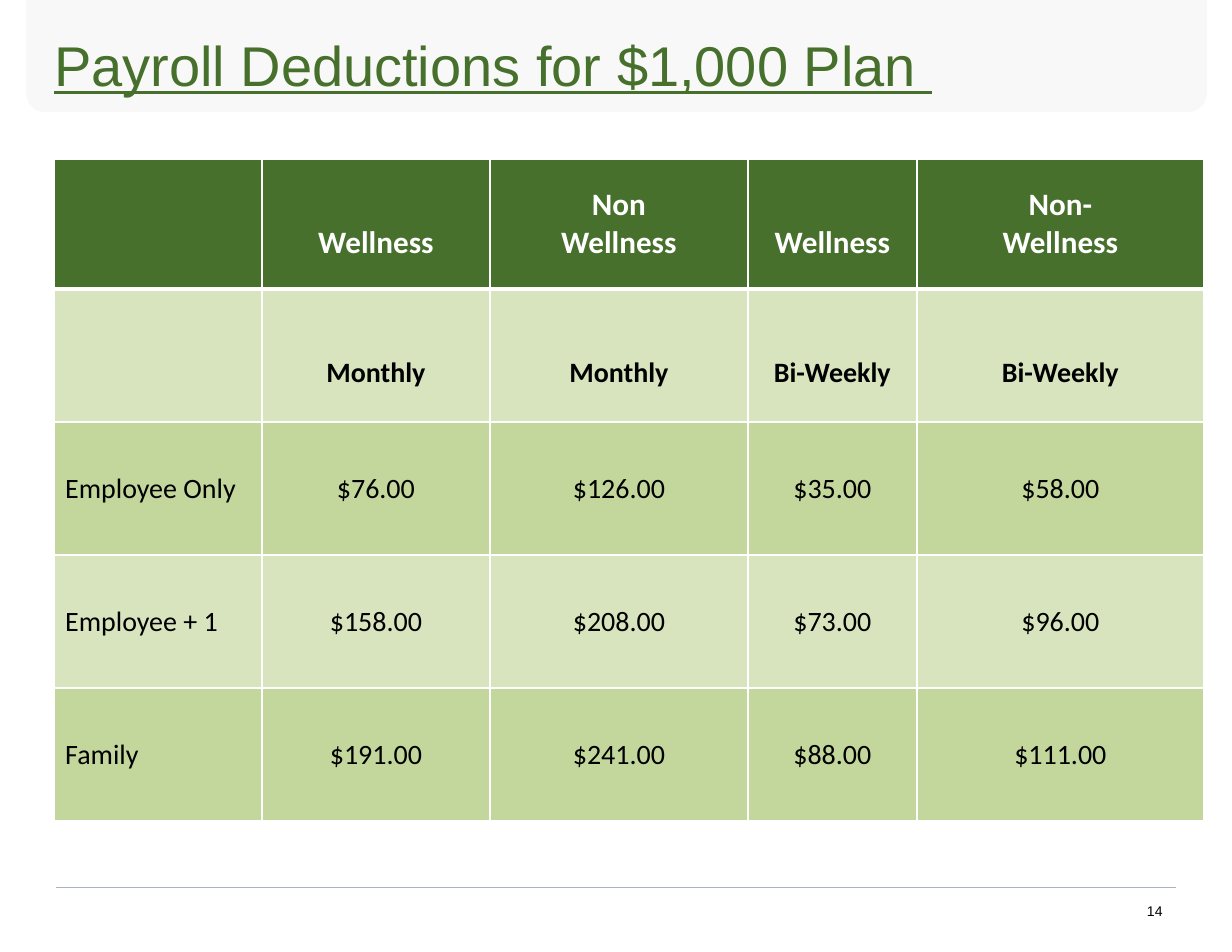
from lxml import etree
from pptx import Presentation
from pptx import util as u
from pptx.dml.color import RGBColor
from pptx.enum import shapes, text
from pptx.oxml import ns

PX = 914400 // 112
GREEN = RGBColor(0x46, 0x70, 0x2B)
PALE = RGBColor(0xD7, 0xE4, 0xBD)
LEAF = RGBColor(0xC3, 0xD6, 0x9B)
WHITE = RGBColor(0xFF, 0xFF, 0xFF)
BLACK = RGBColor(0, 0, 0)
BAND = RGBColor(0xF8, 0xF8, 0xF8)
RULE = RGBColor(0xAA, 0xB4, 0xC1)

COLUMNS = (208, 228, 258, 169, 287)
ROWS = (130, 133, 133, 133, 133)
RATES = (
    ("", "Wellness", "Non\nWellness", "Wellness", "Non-\nWellness"),
    ("", "Monthly", "Monthly", "Bi-Weekly", "Bi-Weekly"),
    ("Employee Only", "$76.00", "$126.00", "$35.00", "$58.00"),
    ("Employee + 1", "$158.00", "$208.00", "$73.00", "$96.00"),
    ("Family", "$191.00", "$241.00", "$88.00", "$111.00"),
)


def px(*lengths):
    return [n * PX for n in lengths]


def style(font, name, size, color, bold=False):
    font.name, font.size, font.bold = name, u.Pt(size), bold
    font.color.rgb = color


def clear_margins(frame):
    frame.margin_left = frame.margin_right = 0
    frame.margin_top = frame.margin_bottom = 0


def add_heading(slide, x, y, w, h):
    # Band with rounded lower corners, behind the title
    band = slide.shapes.add_shape(
        shapes.MSO_SHAPE.ROUND_2_SAME_RECTANGLE, *px(x, y, w, h))
    band.rotation = 180
    band.shadow.inherit = False
    band.fill.solid()
    band.fill.fore_color.rgb = BAND
    band.line.fill.background()
    slide.shapes._spTree.insert(2, band._element)

    # Title
    title = slide.shapes.title
    title.left, title.top, title.width, title.height = px(
        x + 28, y + 30, w - 56, h - 44)
    frame = title.text_frame
    clear_margins(frame)
    frame.auto_size = text.MSO_AUTO_SIZE.NONE
    frame.vertical_anchor = text.MSO_ANCHOR.BOTTOM
    frame.text = "Payroll Deductions for $1,000 Plan "
    heading = frame.paragraphs[0]
    heading.alignment = text.PP_ALIGN.LEFT
    style(heading.font, "Arial", 36, GREEN)
    heading.font.underline = True


def set_borders(cell, **widths):
    props = cell._tc.get_or_add_tcPr()
    for place, side in enumerate("LRTB"):
        line = etree.Element(ns.qn(f"a:ln{side}"),
                             w=str(u.Pt(widths.get(side, 1))))
        fill = etree.SubElement(line, ns.qn("a:solidFill"))
        etree.SubElement(fill, ns.qn("a:srgbClr"), val=str(WHITE))
        props.insert(place, line)


def add_rates(slide, x, y):
    rates = slide.shapes.add_table(
        len(ROWS), len(COLUMNS), *px(x, y, sum(COLUMNS), sum(ROWS))).table
    for column, width in zip(rates.columns, COLUMNS):
        column.width = width * PX
    for row, height in zip(rates.rows, ROWS):
        row.height = height * PX

    for r, labels in enumerate(RATES):
        size = 20 if r == 0 else 18
        color = WHITE if r == 0 else BLACK
        shade = GREEN if r == 0 else PALE if r % 2 else LEAF
        for c, label in enumerate(labels):
            cell = rates.cell(r, c)
            cell.text = label
            cell.vertical_anchor = text.MSO_ANCHOR.MIDDLE
            cell.fill.solid()
            cell.fill.fore_color.rgb = shade
            set_borders(cell, T=3 if r == 1 else 1, B=3 if r == 0 else 1)
            # One-line headings sit a line lower
            if r < 2 and "\n" not in label:
                cell.margin_top = u.Inches(0.05) + u.Pt(size * 1.22)
            for line in cell.text_frame.paragraphs:
                line.alignment = (text.PP_ALIGN.CENTER if c
                                  else text.PP_ALIGN.LEFT)
                style(line.font, "Calibri", size, color, bold=r < 2)


def add_footer(slide, x, y, w):
    # Rule
    rule = slide.shapes.add_connector(
        shapes.MSO_CONNECTOR.STRAIGHT, *px(x, y, x + w, y))
    rule.line.color.rgb = RULE
    rule.line.width = u.Pt(0.25)
    etree.SubElement(rule._element.spPr, ns.qn("a:effectLst"))

    # Page number
    number = slide.shapes.add_textbox(*px(x + w - 29, y + 16, 22, 18))
    frame = number.text_frame
    clear_margins(frame)
    frame.word_wrap = True
    frame.text = "14"
    style(frame.paragraphs[0].font, "Arial", 9, BLACK)


def main():
    deck = Presentation()
    deck.slide_width, deck.slide_height = px(1232, 952)
    slide = deck.slides.add_slide(deck.slide_layouts[5])
    add_heading(slide, 26, 0, 1181, 112)
    add_rates(slide, 54, 159)
    add_footer(slide, 56, 887, 1120)
    deck.save("out.pptx")


if __name__ == "__main__":
    main()
